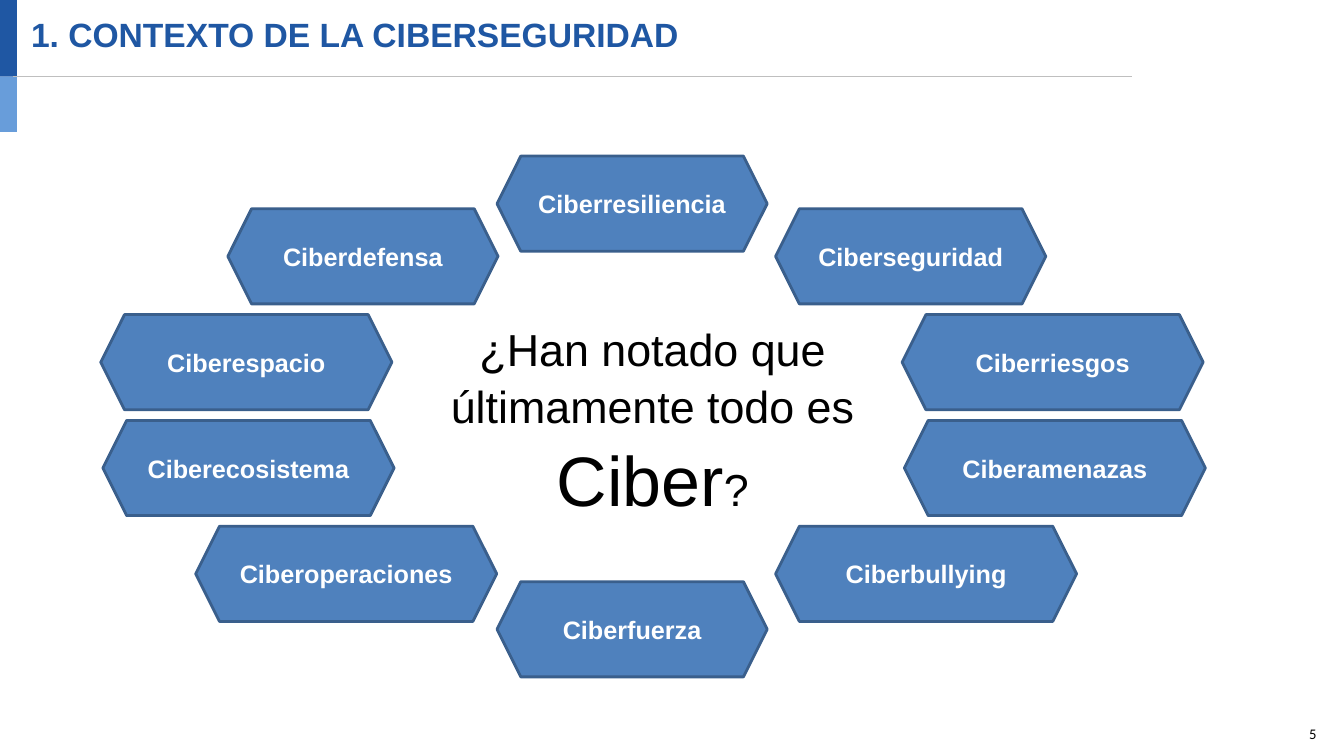
from pptx import Presentation
from pptx.dml.color import RGBColor
from pptx.enum.shapes import MSO_CONNECTOR, MSO_SHAPE
from pptx.enum.text import MSO_ANCHOR, PP_ALIGN
from pptx.oxml.ns import qn
from pptx.util import Pt
from lxml import etree

RECT, HEX = MSO_SHAPE.RECTANGLE, MSO_SHAPE.HEXAGON
LINE = MSO_CONNECTOR.STRAIGHT
LEFT, CENTER = PP_ALIGN.LEFT, PP_ALIGN.CENTER
TOP, MIDDLE = MSO_ANCHOR.TOP, MSO_ANCHOR.MIDDLE

NAVY = RGBColor(0x1F, 0x57, 0xA3)
SKY = RGBColor(0x68, 0x9D, 0xDA)
GRAY = RGBColor(0xBF, 0xBF, 0xBF)
BLUE = RGBColor(0x4F, 0x81, 0xBD)
EDGE = RGBColor(0x3A, 0x5F, 0x8C)
BLACK = RGBColor(0, 0, 0)
WHITE = RGBColor(255, 255, 255)

TITLE = "1. CONTEXTO DE LA CIBERSEGURIDAD"
QUERY = [
    [("¿Han notado que últimamente todo es", 32)],
    [("Ciber", 50), ("?", 32)],
]
SMALL, MEDIUM, LARGE = 193, 208, 215
HEIGHT = 68
ROWS = [0, 37.6, 113.2, 188.8, 264.4, 304]
TERMS = [
    ("Ciberresiliencia", 283, 0, SMALL),
    ("Ciberseguridad", 482, 1, SMALL),
    ("Ciberriesgos", 572.4, 2, LARGE),
    ("Ciberamenazas", 574, 3, LARGE),
    ("Ciberdefensa", 90.7, 1, SMALL),
    ("Ciberbullying", 482, 4, LARGE),
    ("Ciberespacio", 0, 2, MEDIUM),
    ("Ciberecosistema", 1.5, 3, MEDIUM),
    ("Ciberoperaciones", 67.8, 4, LARGE),
    ("Ciberfuerza", 283, 5, SMALL),
]


def write(shape, paras, color=BLACK, font="Arial", bold=False,
          align=LEFT, anchor=TOP, space=1.0):
    frame = shape.text_frame
    frame.word_wrap = True
    frame.vertical_anchor = anchor
    for i, runs in enumerate(paras):
        para = frame.add_paragraph() if i else frame.paragraphs[0]
        para.alignment = align
        para.line_spacing = space
        for text, size in runs:
            run = para.add_run()
            run.text = text
            run.font.name = font
            run.font.size = Pt(size)
            run.font.bold = bold
            run.font.color.rgb = color


def place(slide, kind, box, fill, edge=None):
    shape = slide.shapes.add_shape(kind, *map(Pt, box))
    shape.shadow.inherit = False
    shape.fill.solid()
    shape.fill.fore_color.rgb = fill
    if edge is None:
        shape.line.fill.background()
    else:
        shape.line.color.rgb = edge
        shape.line.width = Pt(2)
    return shape


def label(slide, box, paras, **style):
    write(slide.shapes.add_textbox(*map(Pt, box)), paras, **style)


def header(slide, box):
    x, y, w, h = box
    bar = 12.2
    place(slide, RECT, (x, y, bar, h), NAVY)
    place(slide, RECT, (x, y + h, bar, 39.6), SKY)
    ends = (x + 9.4, y + h, x + w, y + h)
    rule = slide.shapes.add_connector(LINE, *map(Pt, ends))
    rule.line.color.rgb = GRAY
    rule.line.width = Pt(0.75)
    etree.SubElement(rule.line._get_or_add_ln().getparent(), qn("a:effectLst"))
    label(slide, (x + 15.1, y + 6.5, 698, 36.7), [[(TITLE, 24)]],
          color=NAVY, bold=True)


def ring(slide, box):
    x, y, w, h = box
    label(slide, (x + 232.6, y + 113, 323.3, 145.4), QUERY,
          align=CENTER, space=1.05)
    for name, left, row, width in TERMS:
        cell = place(slide, HEX, (x + left, y + ROWS[row], width, HEIGHT),
                     BLUE, EDGE)
        write(cell, [[(name, 18)]], color=WHITE, bold=True,
              align=CENTER, anchor=MIDDLE)


def footer(slide, box):
    label(slide, box, [[("5", 10.5)]], font="Calibri")


def main():
    deck = Presentation()
    deck.slide_width, deck.slide_height = Pt(960), Pt(540)
    slide = deck.slides.add_slide(deck.slide_layouts[6])
    header(slide, (0, 0, 808.6, 54.7))
    ring(slide, (72, 111.5, 789, 372))
    footer(slide, (928, 514, 32, 26))
    deck.save("out.pptx")


if __name__ == "__main__":
    main()
